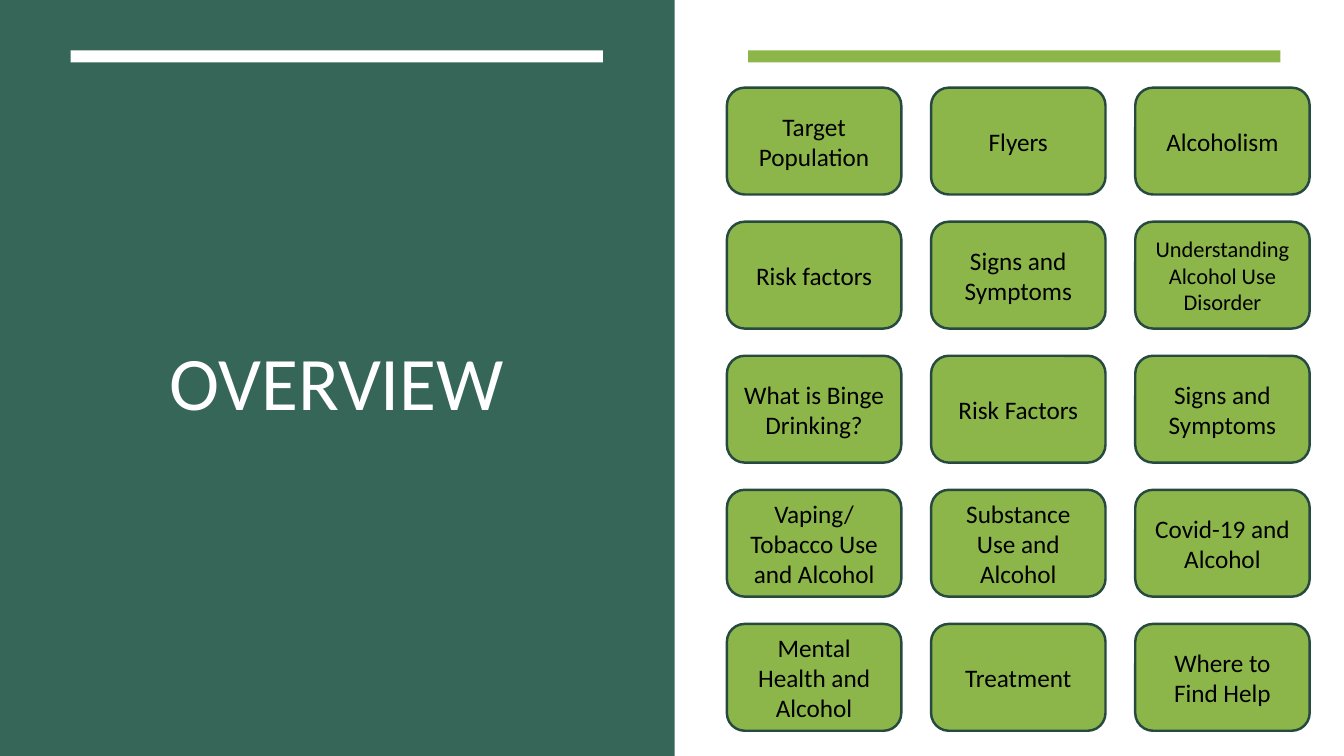
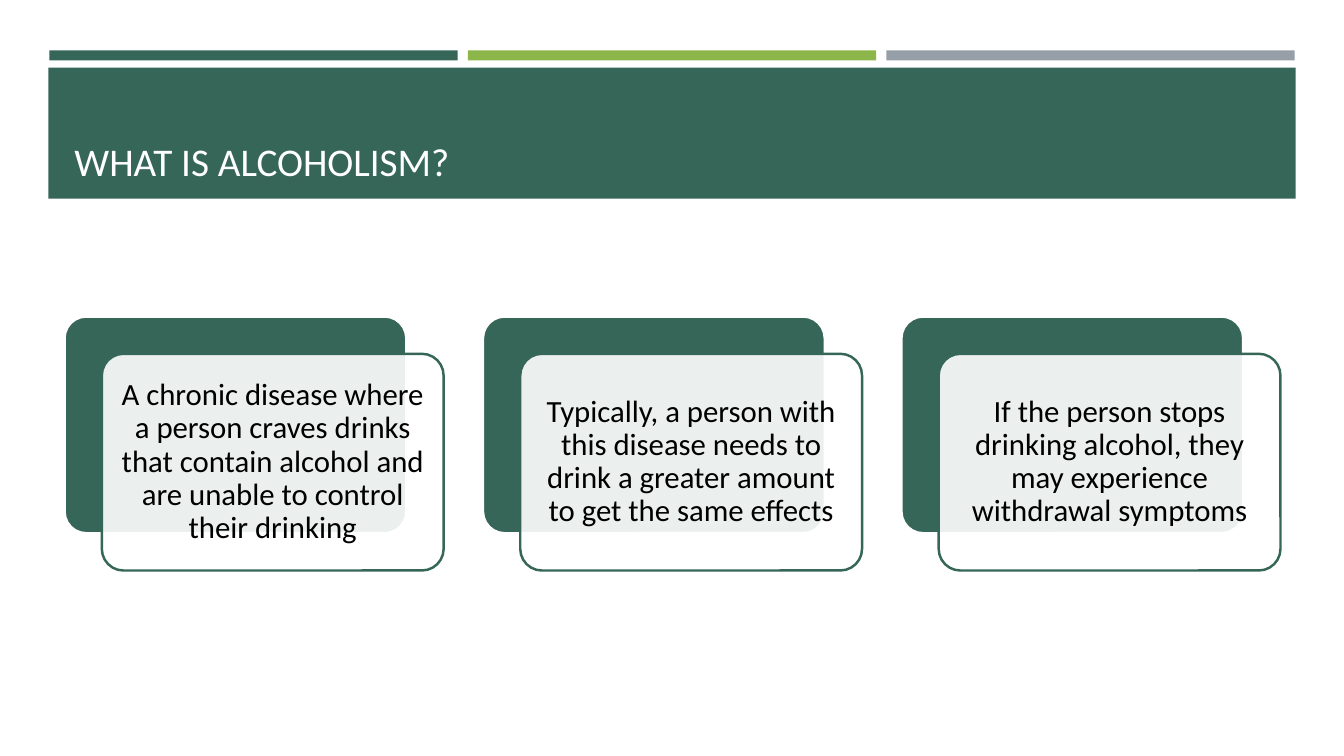
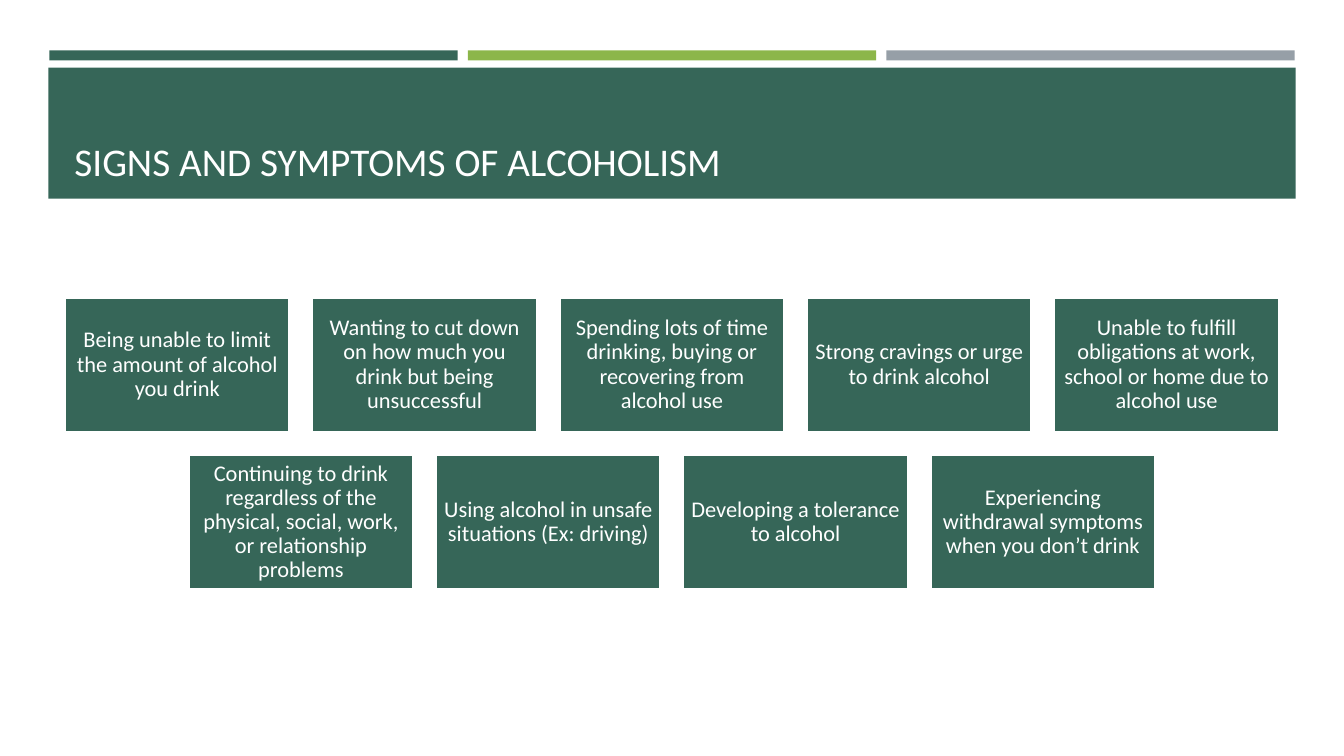
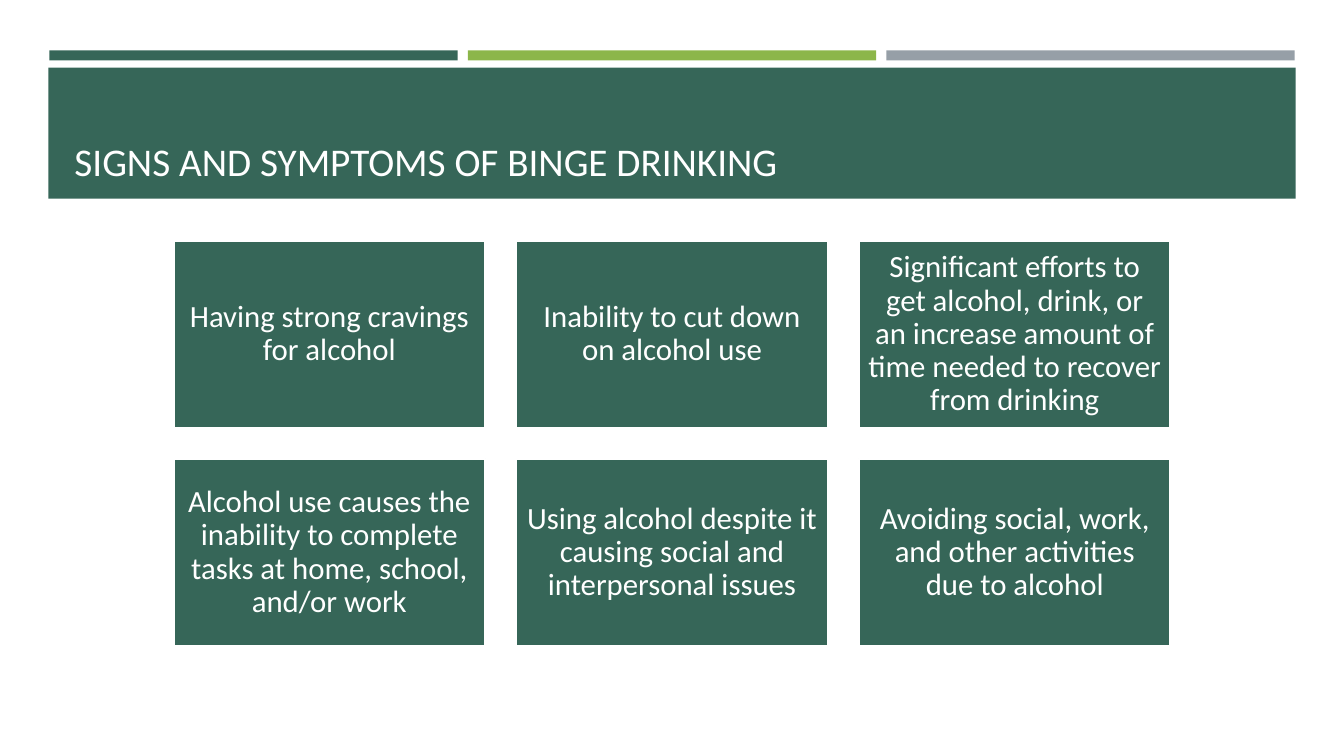
from lxml import etree
from pptx import Presentation
from pptx.dml.color import RGBColor
from pptx.enum.shapes import MSO_SHAPE
from pptx.enum.text import MSO_ANCHOR, PP_ALIGN
from pptx.oxml.ns import qn
from pptx.util import Inches, Pt

RECT, ROUND = MSO_SHAPE.RECTANGLE, MSO_SHAPE.ROUNDED_RECTANGLE
MIDDLE, BOTTOM = MSO_ANCHOR.MIDDLE, MSO_ANCHOR.BOTTOM
LEFT, CENTER = PP_ALIGN.LEFT, PP_ALIGN.CENTER

FONT = "Calibri"
WIDE, HIGH = 13.33, 7.5
COLORS = {
    "pine": "366658",
    "dark": "274A40",
    "lime": "8CB64A",
    "gray": "969FA7",
    "white": "FFFFFF",
    "black": "000000",
}

TOPICS = [
    ["Target Population", "Flyers", "Alcoholism"],
    ["Risk factors", "Signs and Symptoms", "Understanding Alcohol Use Disorder"],
    ["What is Binge Drinking?", "Risk Factors", "Signs and Symptoms"],
    ["Vaping/ Tobacco Use and Alcohol", "Substance Use and Alcohol",
     "Covid-19 and Alcohol"],
    ["Mental Health and Alcohol", "Treatment", "Where to Find Help"],
]
FACTS = [
    "A chronic disease where a person craves drinks that contain alcohol "
    "and are unable to control their drinking",
    "Typically, a person with this disease needs to drink a greater amount "
    "to get the same effects",
    "If the person stops drinking alcohol, they may experience withdrawal symptoms",
]
SIGNS = [
    ["Being unable to limit the amount of alcohol you drink",
     "Wanting to cut down on how much you drink but being unsuccessful",
     "Spending lots of time drinking, buying or recovering from alcohol use",
     "Strong cravings or urge to drink alcohol",
     "Unable to fulfill obligations at work, school or home due to alcohol use"],
    ["Continuing to drink regardless of the physical, social, work, "
     "or relationship problems",
     "Using alcohol in unsafe situations (Ex: driving)",
     "Developing a tolerance to alcohol",
     "Experiencing withdrawal symptoms when you don’t drink"],
]
BINGE = [
    ["Having strong cravings for alcohol",
     "Inability to cut down on alcohol use",
     "Significant efforts to get alcohol, drink, or an increase amount of time "
     "needed to recover from drinking"],
    ["Alcohol use causes the inability to complete tasks at home, school, "
     "and/or work",
     "Using alcohol despite it causing social and interpersonal issues",
     "Avoiding social, work, and other activities due to alcohol"],
]


def color(name):
    return RGBColor.from_string(COLORS[name])


def add_box(slide, x, y, w, h, fill, line=None, kind=RECT):
    box = slide.shapes.add_shape(kind, Inches(x), Inches(y), Inches(w), Inches(h))
    box.shadow.inherit = False
    box.fill.solid()
    box.fill.fore_color.rgb = color(fill)
    if line:
        box.line.color.rgb = color(line)
        box.line.width = Pt(1.75)
    else:
        box.line.fill.background()
    return box


def set_text(shape, text, size, ink, align=CENTER, anchor=MIDDLE,
             inset=None, space=None):
    frame = shape.text_frame
    frame.text = text
    frame.word_wrap = True
    frame.vertical_anchor = anchor
    if inset is not None:
        frame.margin_left = frame.margin_right = Inches(inset)
        frame.margin_top = frame.margin_bottom = Inches(inset)
    para = frame.paragraphs[0]
    para.alignment = align
    if space:
        para.line_spacing = space
    font = para.runs[0].font
    font.name, font.size = FONT, Pt(size)
    font.color.rgb = color(ink)


def add_title(slide, x, y, w, h, text, size, align, anchor):
    box = slide.shapes.add_textbox(Inches(x), Inches(y), Inches(w), Inches(h))
    set_text(box, text, size, "white", align, anchor)


def set_alpha(shape, percent):
    tint = shape.fill._xPr.find(qn("a:solidFill"))[0]
    etree.SubElement(tint, qn("a:alpha")).set("val", str(percent * 1000))


def new_slide(deck):
    return deck.slides.add_slide(deck.slide_layouts[6])


def topic_grid(slide, x, y, w, h):
    """Five rows of three rounded tiles, spread over the box."""
    tile_w, tile_h = 1.73, 1.06
    step_x = (w - tile_w) / (len(TOPICS[0]) - 1)
    step_y = (h - tile_h) / (len(TOPICS) - 1)
    for r, row in enumerate(TOPICS):
        for c, text in enumerate(row):
            tile = add_box(slide, x + c * step_x, y + r * step_y,
                           tile_w, tile_h, "lime", "dark", ROUND)
            set_text(tile, text, 16 if len(text) > 32 else 18, "black")


def overview(deck):
    slide = new_slide(deck)
    # Left panel and its title
    half = 6.69
    add_box(slide, 0, 0, half, HIGH, "pine")
    add_title(slide, 0.7, 1.13, 5.28, 5.28, "OVERVIEW", 54, CENTER, MIDDLE)
    # Top rules
    for x, fill in ((0.7, "white"), (7.42, "lime")):
        add_box(slide, x, 0.5, 5.28, 0.12, fill)
    topic_grid(slide, 7.21, 0.87, 5.78, 6.38)


def titled(deck, title):
    """Slide with three colour strips above a title band."""
    slide = new_slide(deck)
    for i, fill in enumerate(("pine", "lime", "gray")):
        add_box(slide, 0.49 + i * 4.15, 0.5, 4.05, 0.1, fill)
    add_box(slide, 0.48, 0.67, 12.37, 1.3, "pine")
    add_title(slide, 0.64, 0.77, 12.06, 1.11, title, 28, LEFT, BOTTOM)
    return slide


def fact_card(slide, x, y, w, h, text):
    """Dark plate with a translucent card set off down and right."""
    shift = 0.37
    size = w - shift, h - shift
    plate = add_box(slide, x, y, *size, "pine", "white", ROUND)
    card = add_box(slide, x + shift, y + shift, *size, "white", "pine", ROUND)
    for part in (plate, card):
        part.adjustments[0] = 0.1
    set_alpha(card, 90)
    set_text(card, text, 22, "black", inset=0.09, space=0.9)


def block_rows(slide, y, w, rows, size, inset):
    """Centred rows of blocks; height and gap follow the block width."""
    h, gap = w * 0.6, w * 0.1
    for r, row in enumerate(rows):
        left = (WIDE - len(row) * (w + gap) + gap) / 2
        for c, text in enumerate(row):
            block = add_box(slide, left + c * (w + gap), y + r * (h + gap),
                            w, h, "pine", "white")
            set_text(block, text, size, "white", inset=inset, space=0.9)


def main():
    deck = Presentation()
    deck.slide_width, deck.slide_height = Inches(WIDE), Inches(HIGH)

    overview(deck)

    slide = titled(deck, "WHAT IS ALCOHOLISM?")
    for i, text in enumerate(FACTS):
        fact_card(slide, 0.64 + i * 4.15, 3.14, 3.76, 2.52, text)

    slide = titled(deck, "SIGNS AND SYMPTOMS OF ALCOHOLISM")
    block_rows(slide, 2.95, 2.23, SIGNS, 16, 0.07)

    slide = titled(deck, "SIGNS AND SYMPTOMS OF BINGE DRINKING")
    block_rows(slide, 2.39, 3.09, BINGE, 22, 0.09)

    deck.save("out.pptx")


if __name__ == "__main__":
    main()
